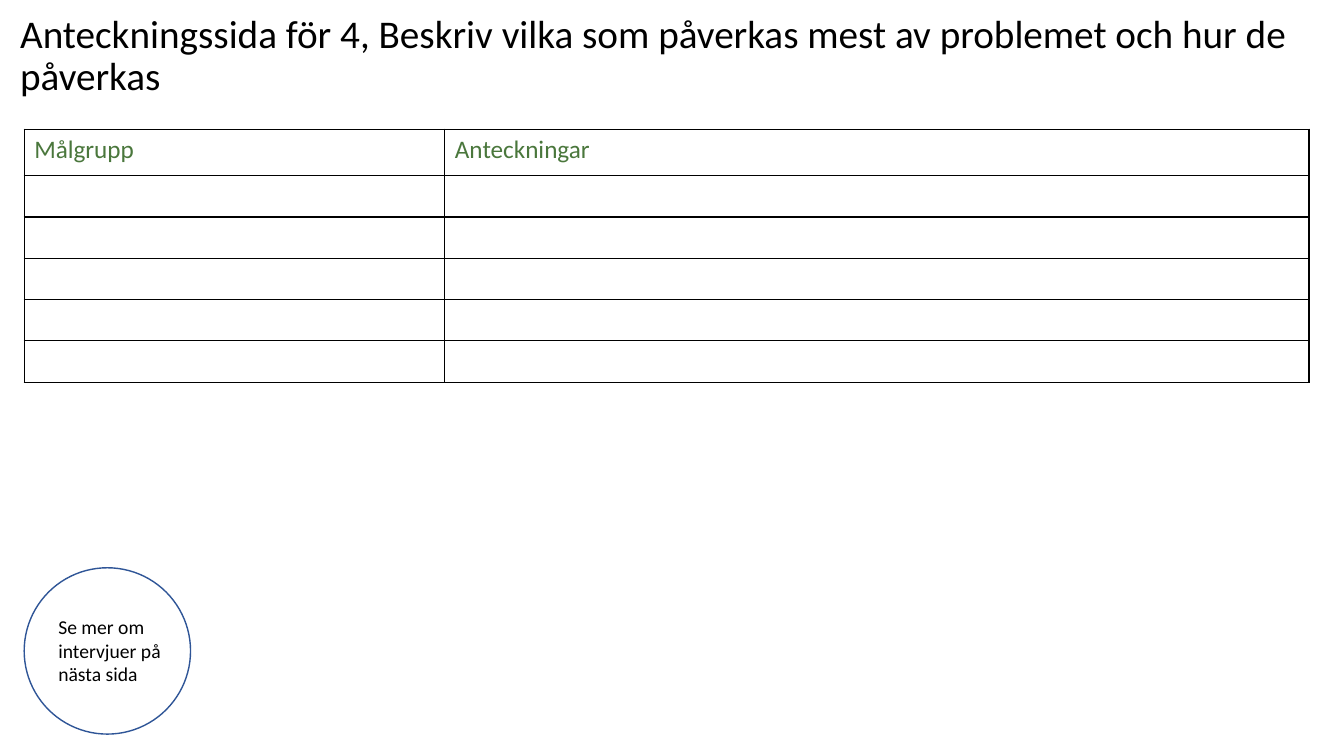
from pptx import Presentation
from pptx import util as u
from pptx.dml.color import RGBColor
from pptx.enum import shapes, text
from pptx.oxml import parse_xml
from pptx.oxml.ns import nsdecls

W, H = u.Inches(13.33), u.Inches(7.5)
MARGIN = 0.018
COLORS = {"ink": "000000", "paper": "FFFFFF", "heading": "4A773C", "circle": "2F5597"}
HEADINGS = ("Målgrupp", "Anteckningar")
COL_SHARES = (0.313, 0.643)
EMPTY_ROWS = 5


def rgb(name):
    return RGBColor.from_string(COLORS[name])


def share(x, y, w, h):
    return int(x * W), int(y * H), int(w * W), int(h * H)


def format_runs(tf, size, color):
    for p in tf.paragraphs:
        p.alignment = text.PP_ALIGN.LEFT
        for r in p.runs:
            r.font.name = "Calibri"
            r.font.size = u.Pt(size)
            r.font.color.rgb = rgb(color)


def add_title(s, words):
    sp = s.shapes.title
    sp.left, sp.top, sp.width, sp.height = share(0.0075, 0.04, 0.986, 0.07)
    tf = sp.text_frame
    tf.text = words
    tf.word_wrap = True
    tf.auto_size = text.MSO_AUTO_SIZE.NONE
    tf.vertical_anchor = text.MSO_ANCHOR.MIDDLE
    tf.paragraphs[0].line_spacing = 0.9
    format_runs(tf, 28, "ink")


def outline_cell(cell):
    tc_pr = cell._tc.get_or_add_tcPr()
    for i, side in enumerate(("lnL", "lnR", "lnT", "lnB")):
        tc_pr.insert(i, parse_xml(
            f'<a:{side} {nsdecls("a")} w="12700"><a:solidFill>'
            f'<a:srgbClr val="{COLORS["ink"]}"/></a:solidFill></a:{side}>'))


def add_notes_table(s):
    box = share(MARGIN, 0.171, sum(COL_SHARES), 0.332)
    table = s.shapes.add_table(EMPTY_ROWS + 1, len(HEADINGS), *box).table
    table.first_row = table.horz_banding = False
    for col, width in zip(table.columns, COL_SHARES):
        col.width = int(width * W)
    for i, row in enumerate(table.rows):
        row.height = u.Inches(0.41 if i else 0.46)
        for cell in row.cells:
            cell.fill.solid()
            cell.fill.fore_color.rgb = rgb("paper")
            outline_cell(cell)
    for cell, heading in zip(table.rows[0].cells, HEADINGS):
        cell.text_frame.text = heading
        format_runs(cell.text_frame, 18, "heading")


def add_circle(s, x, y, diameter):
    sp = s.shapes.add_shape(shapes.MSO_SHAPE.OVAL, int(x * W), int(y * H), diameter, diameter)
    sp.shadow.inherit = False
    sp.fill.solid()
    sp.fill.fore_color.rgb = rgb("paper")
    sp.line.color.rgb = rgb("circle")
    sp.line.width = u.Pt(1)


def add_label(s, box, words):
    tf = s.shapes.add_textbox(*share(*box)).text_frame
    tf.word_wrap = True
    tf.auto_size = text.MSO_AUTO_SIZE.SHAPE_TO_FIT_TEXT
    tf.text = words
    format_runs(tf, 14, "ink")


def main():
    prs = Presentation()
    prs.slide_width, prs.slide_height = W, H
    s = prs.slides.add_slide(prs.slide_layouts[5])
    add_title(s, "Anteckningssida för 4, Beskriv vilka som påverkas mest "
                 "av problemet och hur de påverkas")
    add_notes_table(s)
    add_circle(s, MARGIN, 0.751, u.Inches(1.65))
    add_label(s, (0.036, 0.807, 0.153, 0.108), "Se mer om\nintervjuer på\nnästa sida")
    prs.save("out.pptx")


if __name__ == "__main__":
    main()
